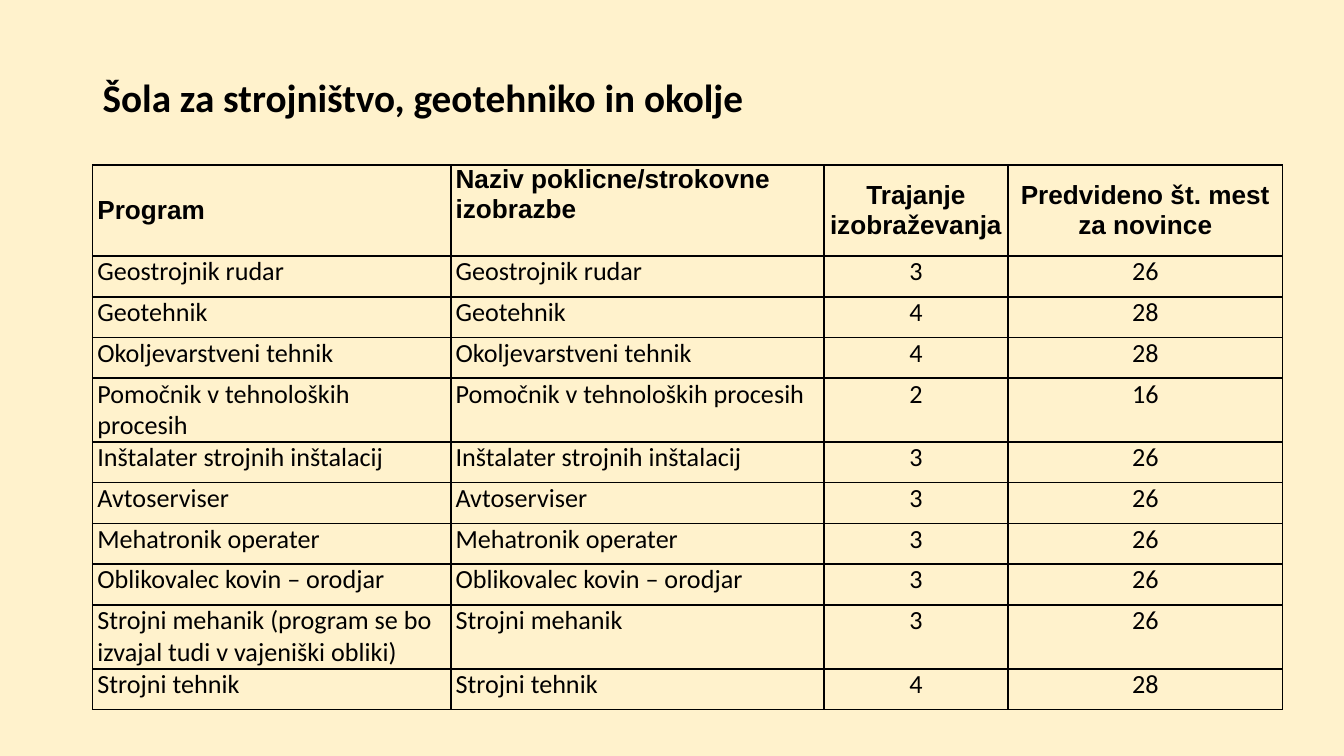
from lxml import etree
from pptx import Presentation
from pptx import util as u
from pptx.dml import color
from pptx.enum import text
from pptx.oxml import ns

COLOURS = {"background": "FFF2CC", "ink": "000000"}
HEADINGS = ["Program", "Naziv poklicne/strokovne izobrazbe",
            "Trajanje izobraževanja", "Predvideno št. mest za novince"]
APPRENTICESHIP = " (program se bo izvajal tudi v vajeniški obliki)"
PROGRAMMES = [
    ("Geostrojnik rudar", "", 3, 26),
    ("Geotehnik", "", 4, 28),
    ("Okoljevarstveni tehnik", "", 4, 28),
    ("Pomočnik v tehnoloških procesih", "", 2, 16),
    ("Inštalater strojnih inštalacij", "", 3, 26),
    ("Avtoserviser", "", 3, 26),
    ("Mehatronik operater", "", 3, 26),
    ("Oblikovalec kovin – orodjar", "", 3, 26),
    ("Strojni mehanik", APPRENTICESHIP, 3, 26),
    ("Strojni tehnik", "", 4, 28),
]
COLUMN_WIDTHS = [6.77, 7.05, 3.48, 5.19]
HEADER_HEIGHT, ROW_HEIGHT, TALL_ROW_HEIGHT = 1.72, 0.77, 1.21


class SlideBuilder:
    """Hold the style and the current slide, and add its elements."""

    def __init__(self, deck):
        self.slide = deck.slides.add_slide(deck.slide_layouts[5])
        self.fill(self.slide.background.fill, "background")

    def fill(self, fill, name):
        fill.solid()
        fill.fore_color.rgb = color.RGBColor.from_string(COLOURS[name])

    def style(self, paragraph, size, face, bold, align):
        paragraph.alignment = align
        font = paragraph.font
        font.size, font.name, font.bold = u.Pt(size), face, bold
        font.color.rgb = color.RGBColor.from_string(COLOURS["ink"])

    def title(self, words, left, top, width, height):
        box = self.slide.shapes.title
        box.left, box.top = u.Cm(left), u.Cm(top)
        box.width, box.height = u.Cm(width), u.Cm(height)
        frame = box.text_frame
        frame.text = words
        frame.word_wrap = True
        frame.auto_size = text.MSO_AUTO_SIZE.NONE
        frame.vertical_anchor = text.MSO_ANCHOR.MIDDLE
        frame.margin_left = frame.margin_right = u.Cm(0.19)
        frame.margin_top = frame.margin_bottom = u.Cm(0.1)
        paragraph = frame.paragraphs[0]
        paragraph.line_spacing = 0.9
        self.style(paragraph, 21, "Calibri", True, text.PP_ALIGN.LEFT)

    def border(self, cell):
        properties = cell._tc.get_or_add_tcPr()
        for side in ("a:lnL", "a:lnR", "a:lnT", "a:lnB"):
            line = etree.SubElement(properties, ns.qn(side), w=str(u.Pt(1)))
            solid = etree.SubElement(line, ns.qn("a:solidFill"))
            etree.SubElement(solid, ns.qn("a:srgbClr"), val=COLOURS["ink"])

    def cell(self, cell, words, face, bold, align, anchor):
        cell.text = words
        cell.margin_left = cell.margin_right = u.Cm(0.09)
        cell.margin_top = cell.margin_bottom = 0
        cell.vertical_anchor = anchor
        self.border(cell)
        cell.fill.background()
        self.style(cell.text_frame.paragraphs[0], 14, face, bold, align)

    def table(self, rows, left, top, widths, heights):
        table = self.slide.shapes.add_table(
            len(rows), len(widths), u.Cm(left), u.Cm(top),
            u.Cm(sum(widths)), u.Cm(sum(heights))).table
        table.first_row = table.horz_banding = False
        for column, width in zip(table.columns, widths):
            column.width = u.Cm(width)
        for row, height in zip(table.rows, heights):
            row.height = u.Cm(height)
        for r, row in enumerate(rows):
            header = r == 0
            for c, words in enumerate(row):
                middle = header and c != 1
                self.cell(
                    table.cell(r, c), words,
                    "Arial" if header else "Calibri", header,
                    text.PP_ALIGN.CENTER if c > 1 else text.PP_ALIGN.LEFT,
                    text.MSO_ANCHOR.MIDDLE if middle else text.MSO_ANCHOR.TOP)


def main():
    deck = Presentation()
    deck.slide_width, deck.slide_height = u.Cm(25.4), u.Cm(14.29)
    builder = SlideBuilder(deck)
    builder.title("Šola za strojništvo, geotehniko in okolje", 1.75, 0.51, 21.9, 2.77)
    rows = [HEADINGS] + [[name + note, name, str(years), str(places)]
                         for name, note, years, places in PROGRAMMES]
    heights = [HEADER_HEIGHT] + [TALL_ROW_HEIGHT if note else ROW_HEIGHT
                                 for _, note, _, _ in PROGRAMMES]
    builder.table(rows, 1.75, 3.12, COLUMN_WIDTHS, heights)
    deck.save("out.pptx")


if __name__ == "__main__":
    main()
